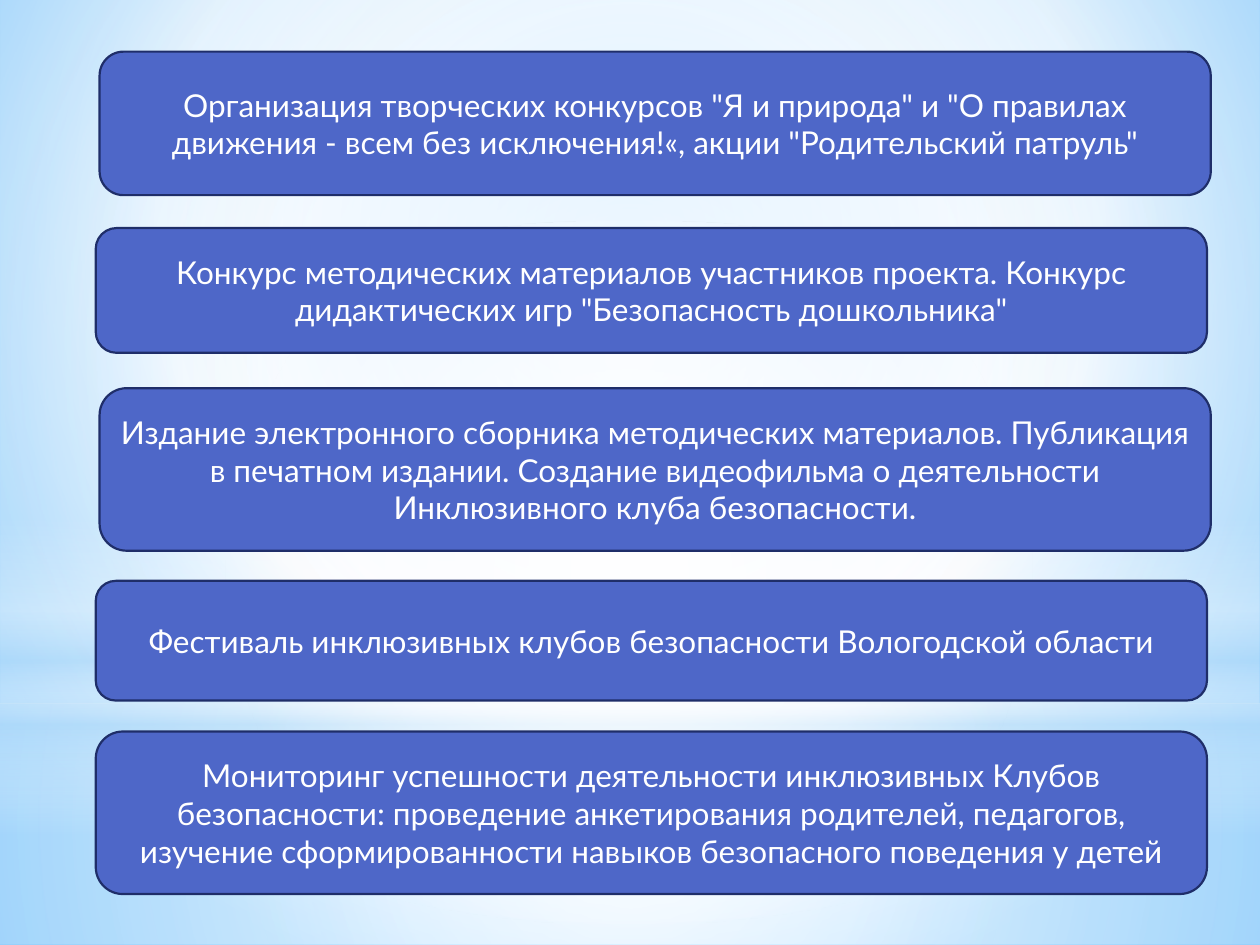
"""Build a slide of five project activities on a soft blue glow."""
from pptx import Presentation
from pptx.dml.color import RGBColor
from pptx.enum.shapes import MSO_SHAPE
from pptx.enum.text import MSO_ANCHOR, PP_ALIGN
from pptx.oxml import parse_xml
from pptx.oxml.ns import nsdecls, qn
from pptx.util import Pt

RECT = MSO_SHAPE.RECTANGLE
ROUND = MSO_SHAPE.ROUNDED_RECTANGLE
OVAL = MSO_SHAPE.OVAL
CENTER = PP_ALIGN.CENTER
MIDDLE = MSO_ANCHOR.MIDDLE

COLORS = {
    "white": "FFFFFF", "pale": "B4DCFA", "sky": "9ED5FF",
    "deep": "5BB9FF", "box": "4E67C8", "edge": "1F2E69",
}
FONT = {"name": "Lato", "size": Pt(18)}
FRAME = {"word_wrap": True, "vertical_anchor": MIDDLE}
MID = (50, 50, 50, 50)
BACK = [(0, "sky", 100), (60, "white", 100), (100, "deep", 100)]
GLOWS = [
    (RECT, (0, 401.8, 720, 138.2),
     [(0, "white", 91), (37, "white", 76), (100, "pale", 79)], MID),
    (RECT, (0, 0, 720, 401.8),
     [(0, "white", 89), (48, "white", 62), (100, "pale", 79)], MID),
    (RECT, (0, 296.6, 720, 180),
     [(0, "white", 0), (29, "white", 30), (45, "pale", 40),
      (55, "white", 26), (65, "pale", 60), (100, "white", 0)], None),
    (OVAL, (0, 126, 720, 401.8),
     [(0, "white", 100), (56, "white", 0)], MID),
]
LEFT, INSET, WIDTH = 54.7, 56.9, 635
BOXES = [
    (INSET, 29.5, 82, 'Организация творческих конкурсов "Я и природа" и '
     '"О правилах движения - всем без исключения!«, '
     'акции "Родительский патруль"'),
    (LEFT, 130.3, 71.3, "Конкурс методических материалов участников проекта. "
     'Конкурс дидактических игр "Безопасность дошкольника"'),
    (INSET, 221.8, 92.9, "Издание электронного сборника методических "
     "материалов. Публикация в печатном издании. Создание видеофильма "
     "о деятельности Инклюзивного клуба безопасности."),
    (LEFT, 331.9, 68.4, "Фестиваль инклюзивных клубов безопасности "
     "Вологодской области"),
    (LEFT, 418, 92.9, "Мониторинг успешности деятельности инклюзивных Клубов "
     "безопасности: проведение анкетирования родителей, педагогов, "
     "изучение сформированности навыков безопасного поведения у детей"),
]


def paint(name):
    return RGBColor.from_string(COLORS[name])


def assign(target, values):
    for key, value in values.items():
        setattr(target, key, value)


def blend(fill, root, stops, focus):
    fill.gradient()
    marks = "".join(
        f'<a:gs pos="{pos * 1000}"><a:srgbClr val="{COLORS[name]}">'
        f'<a:alpha val="{alpha * 1000}"/></a:srgbClr></a:gs>'
        for pos, name, alpha in stops)
    if focus:
        sides = " ".join(f'{side}="{part * 1000}"'
                         for side, part in zip("ltrb", focus))
        course = (f'<a:path path="circle"><a:fillToRect {sides}/></a:path>')
    else:
        course = '<a:lin ang="5400000" scaled="0"/>'
    old = root.find(".//" + qn("a:gradFill"))
    new = parse_xml(f'<a:gradFill {nsdecls("a")} rotWithShape="1">'
                    f"<a:gsLst>{marks}</a:gsLst>{course}</a:gradFill>")
    old.getparent().replace(old, new)


def add_shape(slide, kind, area):
    shape = slide.shapes.add_shape(kind, *map(Pt, area))
    shape.shadow.inherit = False
    return shape


def add_glow(slide, kind, area, stops, focus):
    shape = add_shape(slide, kind, area)
    shape.line.fill.background()
    blend(shape.fill, shape.element, stops, focus)


def add_box(slide, left, top, height, text):
    shape = add_shape(slide, ROUND, (left, top, WIDTH, height))
    shape.fill.solid()
    shape.fill.fore_color.rgb = paint("box")
    shape.line.color.rgb = paint("edge")
    shape.line.width = Pt(1.25)
    frame = shape.text_frame
    assign(frame, FRAME)
    para = frame.paragraphs[0]
    para.alignment = CENTER
    run = para.add_run()
    run.text = text
    assign(run.font, FONT)
    run.font.color.rgb = paint("white")


def main():
    deck = Presentation()
    assign(deck, {"slide_width": Pt(720), "slide_height": Pt(540)})
    slide = deck.slides.add_slide(deck.slide_layouts[6])
    blend(slide.background.fill, slide.element, BACK, (20, 10, 20, 60))
    for glow in GLOWS:
        add_glow(slide, *glow)
    for box in BOXES:
        add_box(slide, *box)
    deck.save("out.pptx")


if __name__ == "__main__":
    main()
